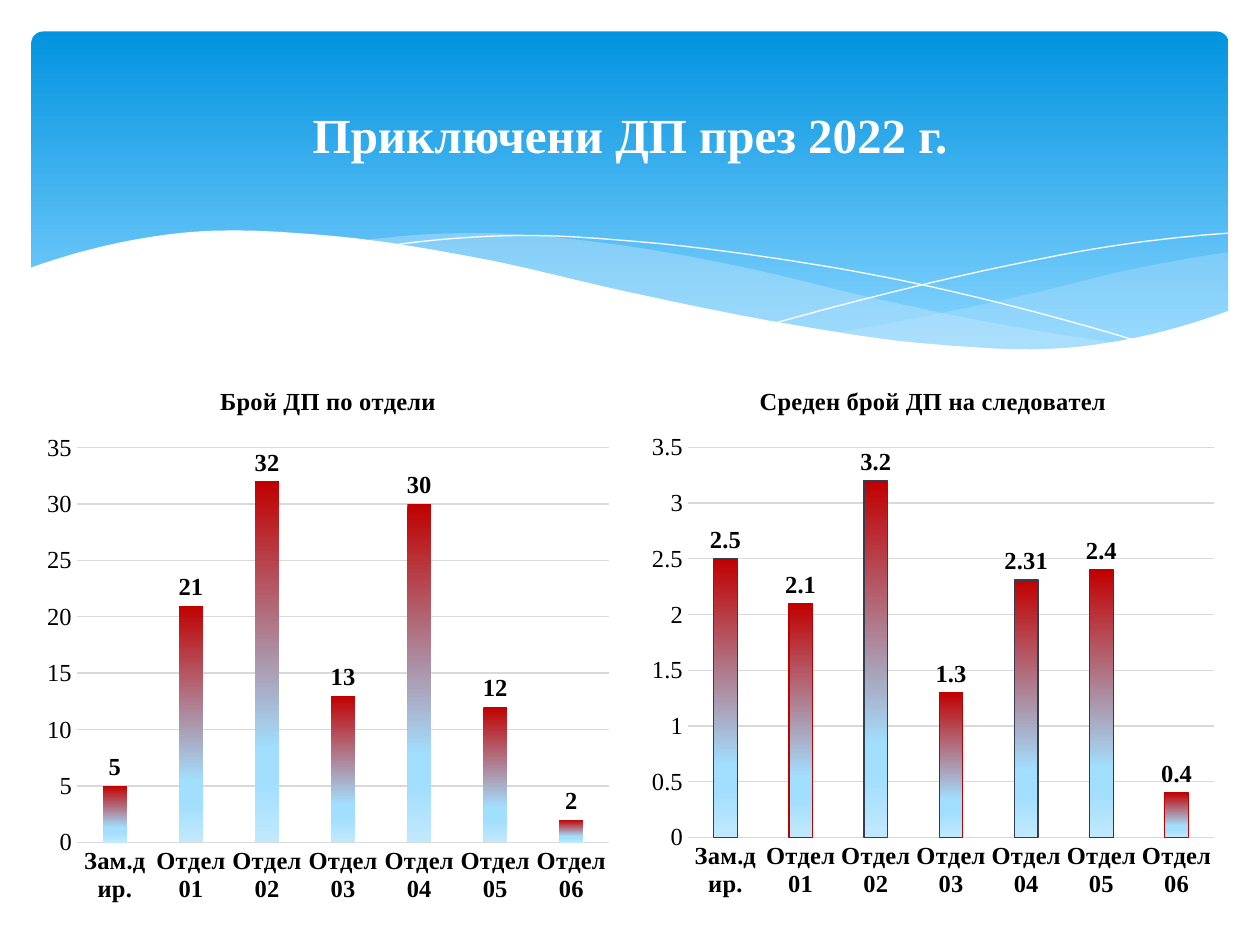
from lxml.etree import SubElement
from pptx import Presentation
from pptx.chart.data import CategoryChartData
from pptx.dml.color import RGBColor
from pptx.enum.chart import XL_CHART_TYPE, XL_LABEL_POSITION, XL_TICK_MARK
from pptx.enum.shapes import MSO_SHAPE
from pptx.enum.text import MSO_ANCHOR, PP_ALIGN
from pptx.oxml.ns import qn
from pptx.util import Inches, Pt

FONT = "Times New Roman"
color = RGBColor.from_string


def paint_gradient(fill, stops):
    """Fill from top to bottom; stops are (percent, hex colour) pairs."""
    fill.gradient()
    fill.gradient_angle = 270
    stop_list = fill._xPr.find(".//" + qn("a:gsLst"))
    stop_list.clear()
    for percent, hex_color in stops:
        stop = SubElement(stop_list, qn("a:gs"), pos=str(percent * 1000))
        SubElement(stop, qn("a:srgbClr"), val=hex_color)


def smooth_curve(left, right, heights, steps=12):
    """Points of a Catmull-Rom curve through evenly spaced heights."""
    first, second, third = heights[:3]
    before = 3 * first - 3 * second + third
    after = 3 * heights[-1] - 3 * heights[-2] + heights[-3]
    knots = [before, *heights, after]
    spans = len(heights) - 1
    points = []
    for index in range(spans * steps + 1):
        knot = min(index // steps, spans - 1)
        t = index / steps - knot
        a, b, c, d = knots[knot:knot + 4]
        height = b + t * (c - a + t * (2 * a - 5 * b + 4 * c - d
                                       + t * (3 * (b - c) + d - a))) / 2
        points.append((left + (right - left) * index / (spans * steps), height))
    return points


deck = Presentation()
deck.slide_width, deck.slide_height = Inches(10), Inches(7.5)
column, row = deck.slide_width // 40, deck.slide_height // 30
page = deck.slides.add_slide(deck.slide_layouts[5])

# Blue header
header = page.shapes.add_shape(
    MSO_SHAPE.ROUNDED_RECTANGLE, column, row, 38 * column, int(10.8 * row))
header.adjustments[0] = 0.034
header.shadow.inherit = False
header.line.fill.background()
paint_gradient(header.fill, [(0, "0293E0"), (90, "83D3FE")])

# Waves in hundredths of an inch: fill, opacity, left, right, upper and lower edge
waves = [
    ("C6E7FC", 29, 661, 976, [265, 250, 233, 214, 200], [265, 274, 278, 270, 247]),
    ("C6E7FC", 40, 286, 893, [191, 185, 194, 212, 236, 257, 273],
     [191, 208, 232, 253, 270, 278, 273]),
    (None, 100, 309, 907, [195, 187, 192, 204, 221, 244, 272], None),
    (None, 100, 613, 975, [257, 233, 212, 195, 185], None),
    ("FFFFFF", 100, 23, 977, [213, 185, 187, 205, 232, 256, 273, 275, 246],
     [329] * 3),
]
group = page.shapes.add_group_shape()
for fill_color, opacity, left, right, upper, lower in waves:
    points = smooth_curve(left, right, upper)
    if lower:
        points += reversed(smooth_curve(left, right, lower))
    # Ten units to a hundredth keep the curve fine after rounding
    points = [(10 * x, 10 * y) for x, y in points]
    builder = group.shapes.build_freeform(*points[0], scale=Inches(1) / 1000)
    builder.add_line_segments(points[1:], close=lower is not None)
    wave = builder.convert_to_shape()
    wave.shadow.inherit = False
    if fill_color is None:
        wave.fill.background()
        wave.line.color.rgb = color("FFFFFF")
        wave.line.width = Pt(0)
        continue
    wave.line.fill.background()
    wave.fill.solid()
    wave.fill.fore_color.rgb = color(fill_color)
    if opacity < 100:
        shade = wave.fill._xPr.find(".//" + qn("a:srgbClr"))
        SubElement(shade, qn("a:alpha"), val=str(opacity * 1000))

# Title, brought in front of the header
title = page.shapes.title
title.left, title.top = 2 * column, int(1.5 * row)
title.width, title.height = 36 * column, int(5.5 * row)
title.text_frame.text = "Приключени ДП през 2022 г."
title.text_frame.vertical_anchor = MSO_ANCHOR.MIDDLE
para = title.text_frame.paragraphs[0]
para.alignment = PP_ALIGN.CENTER
span = para.runs[0]
span.font.name, span.font.size, span.font.bold = FONT, Pt(28), True
span.font.color.rgb = color("FFFFFF")
title.element.getparent().append(title.element)

# Charts: left, height, title, axis maximum, values, dark-edged bars
departments = ["Зам.дир."] + [f"Отдел {number:02}" for number in range(1, 7)]
bar_stops = [(0, "C00000"), (74, "A2DEFE"), (83, "A2DEFE"), (100, "C1E9FE")]
charts = [
    (0.28, 4.37, "Брой ДП по отдели", 35, [5, 21, 32, 13, 30, 12, 2], None),
    (5.08, 4.33, "Среден брой ДП на следовател", 3.5,
     [2.5, 2.1, 3.2, 1.3, 2.31, 2.4, 0.4], (0, 2, 4)),
]
for left, height, heading, maximum, values, dark_bars in charts:
    data = CategoryChartData()
    data.categories = departments
    data.add_series("Series 1", values)
    chart = page.shapes.add_chart(
        XL_CHART_TYPE.COLUMN_CLUSTERED, Inches(left), Inches(2.88),
        Inches(4.65), Inches(height), data).chart
    chart.has_legend = False
    chart.font.name, chart.font.size = FONT, Pt(12)
    chart.font.color.rgb = color("000000")

    chart.has_title = True
    chart.chart_title.include_in_layout = False
    chart.chart_title.text_frame.text = heading
    heading_font = chart.chart_title.text_frame.paragraphs[0].runs[0].font
    heading_font.name, heading_font.size, heading_font.bold = FONT, Pt(14), True
    heading_font.color.rgb = color("000000")

    category_axis, value_axis = chart.category_axis, chart.value_axis
    for axis, bold in ((category_axis, True), (value_axis, False)):
        axis.major_tick_mark = axis.minor_tick_mark = XL_TICK_MARK.NONE
        axis.tick_labels.font.size = Pt(14)
        axis.tick_labels.font.bold = bold
    value_axis.minimum_scale, value_axis.maximum_scale = 0, maximum
    value_axis.major_unit = maximum / 7
    value_axis.format.line.fill.background()
    for line in (category_axis.format.line, value_axis.major_gridlines.format.line):
        line.color.rgb = color("D9D9D9")
        line.width = Pt(0.75)

    plot = chart.plots[0]
    plot.gap_width, plot.overlap, plot.vary_by_categories = 219, -27, False
    plot.has_data_labels = True
    labels = plot.data_labels
    labels.show_value = True
    labels.position = XL_LABEL_POSITION.OUTSIDE_END
    labels.font.size, labels.font.bold = Pt(14), True

    series = plot.series[0]
    paint_gradient(series.format.fill, bar_stops)
    if dark_bars is None:
        series.format.line.fill.background()
        continue
    series.format.line.color.rgb = color("C00000")
    series.format.line.width = Pt(0.75)
    for index in dark_bars:
        bar = series.points[index].format
        paint_gradient(bar.fill, bar_stops)
        bar.line.color.rgb = color("333F50")
        bar.line.width = Pt(0.75)

deck.save("out.pptx")
